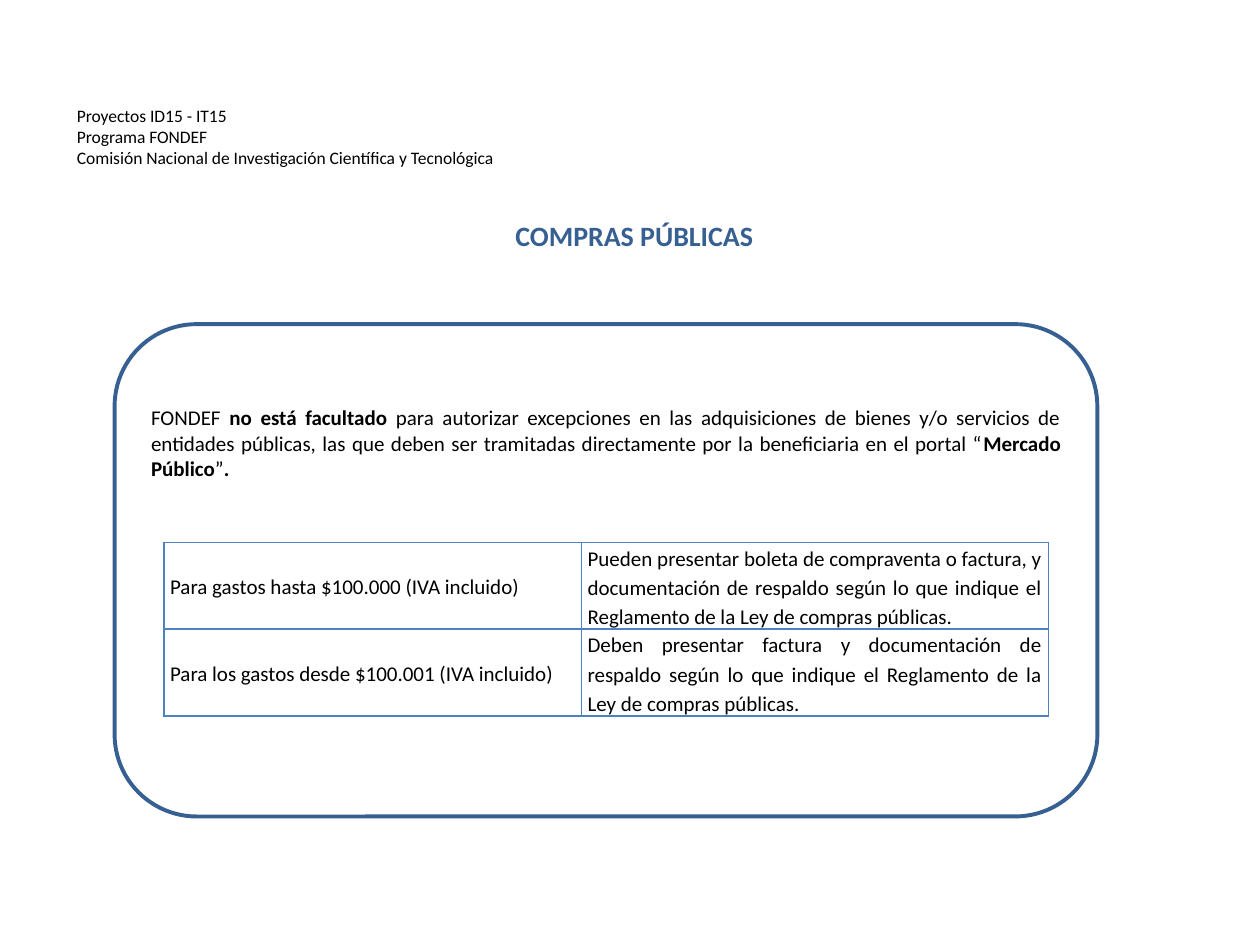
from dataclasses import dataclass

from lxml.etree import SubElement
from pptx import Presentation
from pptx.dml.color import RGBColor
from pptx.enum.shapes import MSO_SHAPE as Shape
from pptx.enum.text import MSO_ANCHOR as Anchor, MSO_AUTO_SIZE as AutoSize, PP_ALIGN as Align
from pptx.oxml.ns import qn
from pptx.util import Inches, Pt


@dataclass(frozen=True)
class Theme:
    font: str = "Calibri"
    ink: str = "000000"
    accent: str = "376092"
    border: str = "4F81BD"
    header_size: int = 10
    title_size: int = 16
    body_size: int = 12
    outline: float = 2.25
    border_width: float = 1


THEME = Theme()
WIDTH, HEIGHT = Inches(10), Inches(7.5)

HEADER = ["Proyectos ID15 - IT15", "Programa FONDEF",
          "Comisión Nacional de Investigación Científica y Tecnológica"]
HEADING = "COMPRAS PÚBLICAS"
NOTICE = [
    ("FONDEF ", False),
    ("no está facultado", True),
    (" para autorizar excepciones en las adquisiciones de bienes y/o servicios de "
     "entidades públicas, las que deben ser tramitadas directamente por la "
     "beneficiaria en el portal “", False),
    ("Mercado Público", True),
    ("”", False),
    (".", True),
]
EXPENSES = [
    ("Para gastos hasta $100.000 (IVA incluido)",
     "Pueden presentar boleta de compraventa o factura, y documentación de respaldo "
     "según lo que indique el Reglamento de la Ley de compras públicas."),
    ("Para los gastos desde $100.001 (IVA incluido)",
     "Deben presentar factura y documentación de respaldo según lo que indique el "
     "Reglamento de la Ley de compras públicas."),
]


def share(box, left, top, width, height):
    """Return the part of a box given by shares of its width and height."""
    x, y, w, h = box
    return (int(x + w * left), int(y + h * top), int(w * width), int(h * height))


def place(shape, box):
    shape.left, shape.top, shape.width, shape.height = box


def add_run(paragraph, text, size, color=THEME.ink, bold=False):
    run = paragraph.add_run()
    run.text = text
    run.font.name = THEME.font
    run.font.size = Pt(size)
    run.font.bold = bold
    run.font.color.rgb = RGBColor.from_string(color)


def add_header(slide, box):
    title = slide.shapes.title
    place(title, box)
    frame = title.text_frame
    frame.auto_size = AutoSize.NONE
    frame.word_wrap = True
    frame.vertical_anchor = Anchor.MIDDLE
    paragraph = frame.paragraphs[0]
    paragraph.alignment = Align.LEFT
    for index, line in enumerate(HEADER):
        if index:
            paragraph.add_line_break()
        add_run(paragraph, line, THEME.header_size)


def add_heading(slide, box):
    frame = slide.shapes.add_textbox(*box).text_frame
    frame.word_wrap = True
    paragraph = frame.paragraphs[0]
    paragraph.alignment = Align.CENTER
    add_run(paragraph, HEADING, THEME.title_size, THEME.accent, bold=True)


def add_notice_panel(slide, box):
    panel = slide.shapes.add_shape(Shape.ROUNDED_RECTANGLE, *box)
    panel.shadow.inherit = False
    panel.fill.background()
    panel.line.color.rgb = RGBColor.from_string(THEME.accent)
    panel.line.width = Pt(THEME.outline)
    frame = panel.text_frame
    frame.word_wrap = True
    frame.vertical_anchor = Anchor.TOP
    frame.margin_top = Inches(0.45)
    paragraph = frame.paragraphs[0]
    paragraph.alignment = Align.JUSTIFY
    for text, bold in NOTICE:
        add_run(paragraph, text, THEME.body_size, bold=bold)


def set_borders(cell):
    properties = cell._tc.get_or_add_tcPr()
    for side in ("a:lnL", "a:lnR", "a:lnT", "a:lnB"):
        line = SubElement(properties, qn(side), w=str(Pt(THEME.border_width)))
        fill = SubElement(line, qn("a:solidFill"))
        SubElement(fill, qn("a:srgbClr"), val=THEME.border)


def fill_cell(cell, text, anchor):
    set_borders(cell)
    cell.fill.background()
    cell.vertical_anchor = anchor
    cell.margin_left = cell.margin_right = Inches(0.05)
    cell.margin_top = cell.margin_bottom = 0
    paragraph = cell.text_frame.paragraphs[0]
    paragraph.alignment = Align.JUSTIFY
    paragraph.line_spacing = 1.15
    paragraph.space_after = Pt(10)
    add_run(paragraph, text, THEME.body_size)


def add_expense_table(slide, box):
    table = slide.shapes.add_table(len(EXPENSES), 2, *box).table
    table.first_row = table.horz_banding = False
    first_width = int(box[2] * 0.472)
    table.columns[0].width = first_width
    table.columns[1].width = box[2] - first_width
    for row, texts in enumerate(EXPENSES):
        for column, (text, anchor) in enumerate(zip(texts, (Anchor.MIDDLE, Anchor.TOP))):
            fill_cell(table.cell(row, column), text, anchor)


def build_slide(presentation):
    slide = presentation.slides.add_slide(presentation.slide_layouts[5])
    page = (0, 0, WIDTH, HEIGHT)
    panel = share(page, 0.091, 0.343, 0.78, 0.521)
    add_header(slide, share(page, 0.051, 0.07, 0.781, 0.148))
    add_heading(slide, share(page, 0.05, 0.225, 0.907, 0.05))
    add_notice_panel(slide, panel)
    add_expense_table(slide, share(panel, 0.05, 0.443, 0.9, 0.352))


def main():
    presentation = Presentation()
    presentation.slide_width, presentation.slide_height = WIDTH, HEIGHT
    build_slide(presentation)
    presentation.save("out.pptx")


if __name__ == "__main__":
    main()
